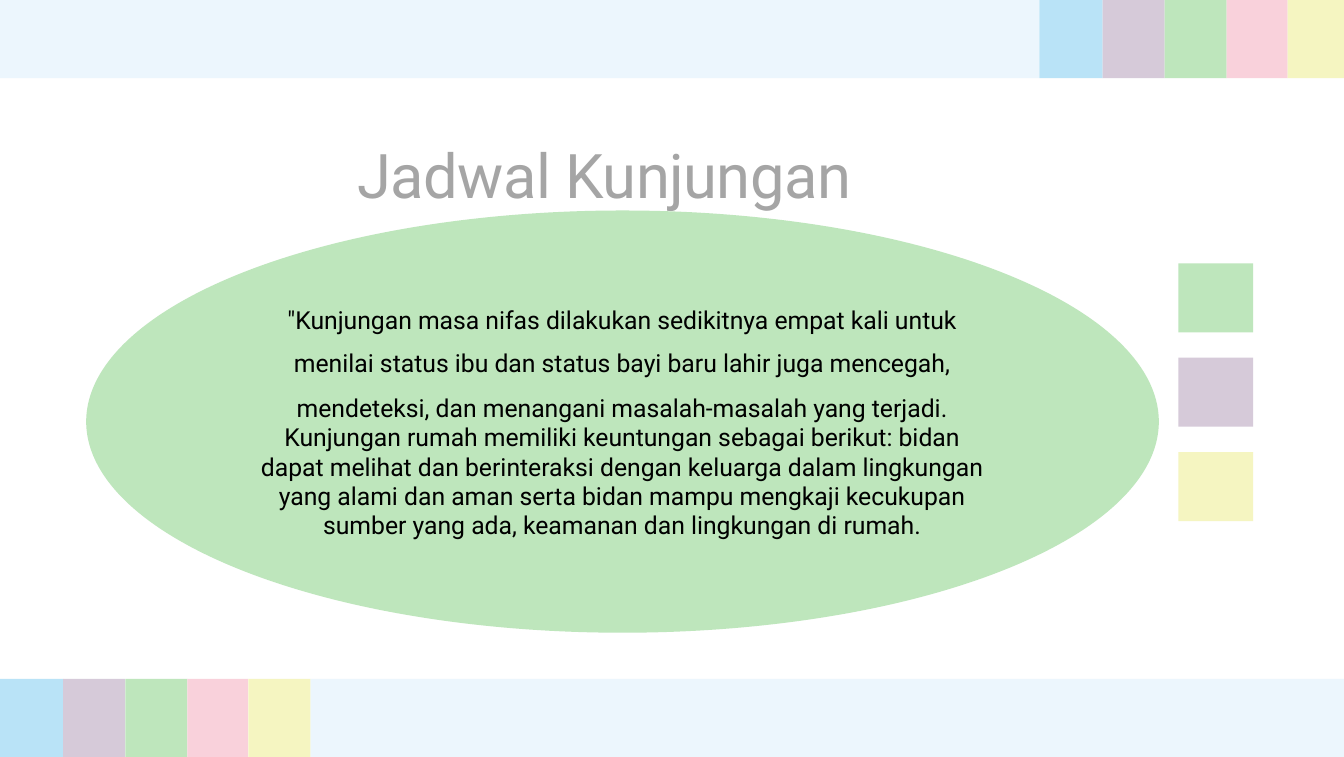
"""Build the "Jadwal Kunjungan" slide with pastel bands and a text oval."""
from dataclasses import dataclass
from itertools import pairwise

from pptx import Presentation
from pptx.dml.color import RGBColor
from pptx.enum.shapes import MSO_SHAPE
from pptx.enum.text import MSO_ANCHOR, MSO_AUTO_SIZE, PP_ALIGN
from pptx.util import Inches, Pt

RECTANGLE, OVAL = MSO_SHAPE.RECTANGLE, MSO_SHAPE.OVAL
TOP, NO_FIT = MSO_ANCHOR.TOP, MSO_AUTO_SIZE.NONE
LEFT, CENTER = PP_ALIGN.LEFT, PP_ALIGN.CENTER

COLORS = {
    "blue": "B9E3F7",
    "purple": "D6CAD9",
    "green": "BEE6BC",
    "pink": "F9D1DB",
    "yellow": "F5F5C1",
    "pale": "ECF6FD",
    "title": "A5A5A5",
    "text": "000000",
}
FONT = "Roboto"
PAGE_WIDTH, PAGE_HEIGHT = 11.69, 6.58
BAND_HEIGHT = 0.68
STRIPES = ("blue", "purple", "green", "pink", "yellow")
STRIPE_EDGES = (0, 0.55, 1.09, 1.63, 2.16, 2.7)
TITLE = "Jadwal Kunjungan"
VISIT_TEXT = (
    "\"Kunjungan masa nifas dilakukan sedikitnya empat kali untuk "
    "menilai status ibu dan status bayi baru lahir juga mencegah,",
    "mendeteksi, dan menangani masalah-masalah yang terjadi. "
    "Kunjungan rumah memiliki keuntungan sebagai berikut: bidan "
    "dapat melihat dan berinteraksi dengan keluarga dalam lingkungan "
    "yang alami dan aman serta bidan mampu mengkaji kecukupan "
    "sumber yang ada, keamanan dan lingkungan di rumah.",
)


@dataclass
class Block:
    """A plain filled shape, measured in inches."""

    left: float
    top: float
    width: float
    height: float
    color: str
    kind: MSO_SHAPE = RECTANGLE


@dataclass
class ParaStyle:
    """Spacing of one paragraph: a line multiple or points, and points before."""

    line: float | Pt
    before: float


def draw_block(page, block: Block) -> None:
    """Draw one block without outline or shadow."""
    shape = page.shapes.add_shape(
        block.kind, Inches(block.left), Inches(block.top),
        Inches(block.width), Inches(block.height))
    shape.shadow.inherit = False
    shape.fill.solid()
    shape.fill.fore_color.rgb = RGBColor.from_string(COLORS[block.color])
    shape.line.fill.background()


def band_blocks(top: float, stripes_left: float, pale_left: float, pale_width: float) -> list[Block]:
    """Return the pale part and the five stripes of one band."""
    blocks = [Block(pale_left, top, pale_width, BAND_HEIGHT, "pale")]
    for color, (start, end) in zip(STRIPES, pairwise(STRIPE_EDGES)):
        left = stripes_left + start
        right = min(stripes_left + end, PAGE_WIDTH)
        blocks.append(Block(left, top, right - left, BAND_HEIGHT, color))
    return blocks


def place_text(box, left: float, top: float, width: float, height: float) -> None:
    """Set the place of a text shape and clear its margins."""
    box.left, box.top = Inches(left), Inches(top)
    box.width, box.height = Inches(width), Inches(height)
    frame = box.text_frame
    frame.margin_left = frame.margin_right = frame.margin_bottom = 0
    frame.margin_top = Inches(0.02)
    frame.word_wrap = True
    frame.auto_size = NO_FIT
    frame.vertical_anchor = TOP


def format_para(para, size: float, color: str, align: PP_ALIGN, style: ParaStyle) -> None:
    """Format a paragraph and its runs."""
    para.alignment = align
    para.line_spacing = style.line
    para.space_before = Pt(style.before)
    for span in para.runs:
        span.font.name = FONT
        span.font.size = Pt(size)
        span.font.color.rgb = RGBColor.from_string(COLORS[color])


def add_title(page) -> None:
    """Fill and format the title placeholder."""
    title = page.shapes.title
    title.text_frame.text = TITLE
    place_text(title, 3.11, 1.17, 4.41, 0.67)
    para = title.text_frame.paragraphs[0]
    format_para(para, 38.5, "title", LEFT, ParaStyle(1.0, 1.1))
    para.runs[0].font._element.set("spc", "-38")


def add_visit_text(page) -> None:
    """Add the two paragraphs over the oval."""
    box = page.shapes.add_textbox(0, 0, 0, 0)
    place_text(box, 2.24, 2.51, 6.34, 2.18)
    box.text_frame.text = "\n".join(VISIT_TEXT)
    styles = (ParaStyle(1.46, 0.9), ParaStyle(Pt(18.4), 9.4))
    for para, style in zip(box.text_frame.paragraphs, styles):
        format_para(para, 15.5, "text", CENTER, style)


def main() -> None:
    """Build and save the deck."""
    deck = Presentation()
    deck.slide_width, deck.slide_height = Inches(PAGE_WIDTH), Inches(PAGE_HEIGHT)
    page = deck.slides.add_slide(deck.slide_layouts[5])
    add_title(page)
    stripes_width = STRIPE_EDGES[-1]
    blocks = band_blocks(0, 9.04, 0, 9.04)
    blocks += band_blocks(PAGE_HEIGHT - BAND_HEIGHT, 0, stripes_width, PAGE_WIDTH - stripes_width)
    blocks += [Block(10.25, 2.29 + 0.82 * row, 0.65, 0.6, color)
               for row, color in enumerate(("green", "purple", "yellow"))]
    blocks.append(Block(0.75, 1.83, 9.33, 3.67, "green", OVAL))
    for block in blocks:
        draw_block(page, block)
    add_visit_text(page)
    deck.save("out.pptx")


if __name__ == "__main__":
    main()
